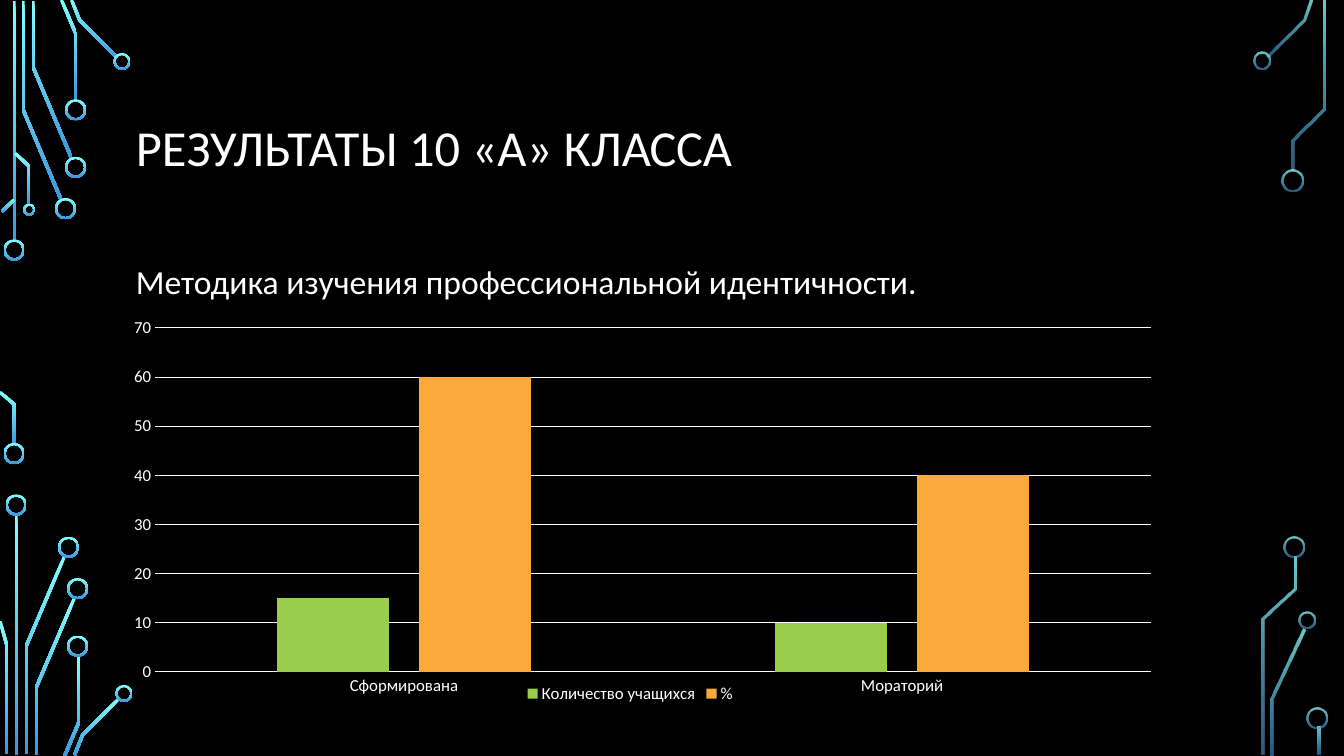
from math import hypot

from lxml import etree
from pptx import Presentation
from pptx.chart.data import CategoryChartData
from pptx.dml.color import RGBColor
from pptx.enum.chart import XL_CHART_TYPE, XL_LEGEND_POSITION, XL_TICK_MARK
from pptx.enum.shapes import MSO_SHAPE
from pptx.enum.text import MSO_ANCHOR
from pptx.oxml import parse_xml
from pptx.oxml.ns import nsdecls, qn
from pptx.util import Inches, Pt

# Content
TITLE = "РЕЗУЛЬТАТЫ 10 «А» КЛАССА"
SUBTITLE = "Методика изучения профессиональной идентичности."
LEVELS = ["Сформирована", "Мораторий"]
RESULTS = [  # name, values, colour
    ("Количество учащихся", (15, 10), "9ACD4C"),
    ("%", (60, 40), "FAA93A"),
]
FONT, WHITE, BLACK = "Calibri", "FFFFFF", "000000"
GLOW = ("82FFFF", "3D97DE")
PLOT_AREA = {"x": 0.046, "y": 0.406, "w": 0.952, "h": 0.538}

# Circuit decoration: centre lines of the traces; centre and diameter of the rings
TRACE_WIDTH, RING_WIDTH = 0.03, 0.02
LEFT_TRACES = [
    [(0.14, 0.01), (0.14, 2.4)],
    [(0.23, 0.01), (0.23, 1.09), (0.61, 1.99)],
    [(0.33, 0.01), (0.33, 0.67), (0.71, 1.57)],
    [(0.61, 0), (0.75, 0.33), (0.75, 1)],
    [(0.71, 0), (0.79, 0.2), (1.16, 0.57)],
    [(0.14, 1.98), (0.02, 2.1)],
    [(0, 3.89), (0.14, 4.01), (0.14, 4.41)],
    [(0.15, 1.52), (0.29, 1.65), (0.29, 2.03)],
    [(0.16, 5.1), (0.16, 7.49)],
    [(0.26, 7.48), (0.26, 6.41), (0.64, 5.52)],
    [(0, 6.16), (0.07, 6.41), (0.07, 7.48)],
    [(0.36, 7.49), (0.36, 6.82), (0.74, 5.93)],
    [(0.64, 7.5), (0.78, 7.17), (0.78, 6.5)],
    [(0.74, 7.49), (0.82, 7.29), (1.18, 6.93)],
]
LEFT_RINGS = [
    (0.14, 2.48, 0.21), (0.14, 4.5, 0.21), (0.65, 2.07, 0.21), (0.75, 1.66, 0.21),
    (0.75, 1.09, 0.21), (1.21, 0.61, 0.17), (0.29, 2.08, 0.12), (0.16, 5.01, 0.21),
    (0.68, 5.43, 0.21), (0.77, 5.84, 0.21), (0.77, 6.41, 0.21), (1.23, 6.88, 0.17),
]
RIGHT_TRACES = [
    [(13, 0), (12.93, 0.2), (12.57, 0.56)],
    [(12.62, 7.49), (12.62, 6.93), (12.93, 6.24)],
    [(13.13, 0.01), (13.13, 1.08), (12.82, 1.39), (12.82, 1.69)],
    [(12.84, 5.52), (12.84, 5.84), (12.53, 6.14), (12.53, 7.49)],
    [(13.08, 7.21), (13.08, 7.49)],
]
RIGHT_RINGS = [
    (12.52, 0.6, 0.17), (12.82, 1.79, 0.21), (12.96, 6.15, 0.17),
    (12.83, 5.43, 0.21), (13.06, 7.12, 0.21),
]
CIRCUITS = [  # traces, rings, opacity in percent at top and bottom
    (LEFT_TRACES, LEFT_RINGS, (100, 100)),
    (RIGHT_TRACES, RIGHT_RINGS, (80, 60)),
]


def rgb(value):
    return RGBColor.from_string(value)


def glow(shape, opacities):
    shape.shadow.inherit = False
    shape.line.fill.background()
    shape.fill.gradient()
    shape.fill.gradient_angle = 270
    for stop, color, opacity in zip(shape.fill.gradient_stops, GLOW, opacities):
        stop.color.rgb = rgb(color)
    for color, opacity in zip(shape._element.spPr.iter(qn("a:srgbClr")), opacities):
        if opacity < 100:
            etree.SubElement(color, qn("a:alpha")).set("val", str(opacity * 1000))


def trace_side(points, offset):
    """Shift a polyline sideways, with mitred corners."""
    normals = []
    for (x1, y1), (x2, y2) in zip(points, points[1:]):
        length = hypot(x2 - x1, y2 - y1)
        normals.append(((y1 - y2) / length, (x2 - x1) / length))
    side = []
    for (x, y), (ax, ay), (bx, by) in zip(points, normals[:1] + normals, normals + normals[-1:]):
        scale = offset / (1 + ax * bx + ay * by)
        side.append((Inches(x + (ax + bx) * scale), Inches(y + (ay + by) * scale)))
    return side


def add_trace(slide, points, opacities):
    half = TRACE_WIDTH / 2
    outline = trace_side(points, half) + trace_side(points, -half)[::-1]
    builder = slide.shapes.build_freeform(*outline[0])
    builder.add_line_segments(outline[1:], close=True)
    glow(builder.convert_to_shape(), opacities)


def add_ring(slide, x, y, size, opacities):
    ring = slide.shapes.add_shape(MSO_SHAPE.DONUT, Inches(x - size / 2), Inches(y - size / 2),
                                  Inches(size), Inches(size))
    ring.adjustments[0] = RING_WIDTH / size
    glow(ring, opacities)


def set_font(font, size):
    font.name, font.size, font.color.rgb = FONT, Pt(size), rgb(WHITE)


def add_text(slide, text, *, top, height, size, spacing, anchor):
    frame = slide.shapes.add_textbox(Inches(1.25), Inches(top), Inches(10.83), Inches(height)).text_frame
    frame.word_wrap = True
    frame.vertical_anchor = anchor
    paragraph = frame.paragraphs[0]
    paragraph.line_spacing = spacing
    run = paragraph.add_run()
    run.text = text
    set_font(run.font, size)


def style_line(line):
    line.color.rgb = rgb(WHITE)
    line.width = Pt(0.75)


def add_results_chart(slide):
    data = CategoryChartData()
    data.categories = LEVELS
    for name, values, _ in RESULTS:
        data.add_series(name, values)
    chart = slide.shapes.add_chart(XL_CHART_TYPE.COLUMN_CLUSTERED, Inches(1.06), Inches(0.68),
                                   Inches(10.38), Inches(6.34), data).chart
    chart.has_title = False
    set_font(chart.font, 10)
    plot = chart.plots[0]
    plot.gap_width, plot.overlap, plot.vary_by_categories = 219, -27, False
    for series, (_, _, color) in zip(plot.series, RESULTS):
        series.format.fill.solid()
        series.format.fill.fore_color.rgb = rgb(color)

    # Axes and legend
    for axis in (chart.category_axis, chart.value_axis):
        axis.major_tick_mark = axis.minor_tick_mark = XL_TICK_MARK.NONE
        set_font(axis.tick_labels.font, 12)
    style_line(chart.category_axis.format.line)
    scale = chart.value_axis
    scale.minimum_scale, scale.maximum_scale, scale.major_unit = 0, 70, 10
    scale.format.line.fill.background()
    scale.has_major_gridlines = True
    style_line(scale.major_gridlines.format.line)
    chart.has_legend = True
    chart.legend.position = XL_LEGEND_POSITION.BOTTOM
    chart.legend.include_in_layout = False
    set_font(chart.legend.font, 12)

    # Fixed place of the plot area
    area = chart._chartSpace.find(".//" + qn("c:plotArea"))
    for layout in area.findall(qn("c:layout")):
        area.remove(layout)
    parts = '<c:layoutTarget val="inner"/><c:xMode val="edge"/><c:yMode val="edge"/>'
    parts += "".join(f'<c:{key} val="{value}"/>' for key, value in PLOT_AREA.items())
    area.insert(0, parse_xml(f'<c:layout {nsdecls("c")}><c:manualLayout>{parts}</c:manualLayout></c:layout>'))


def main():
    deck = Presentation()
    deck.slide_width, deck.slide_height = Inches(13.33), Inches(7.5)
    slide = deck.slides.add_slide(deck.slide_layouts[6])
    slide.background.fill.solid()
    slide.background.fill.fore_color.rgb = rgb(BLACK)
    for traces, rings, opacities in CIRCUITS:
        for points in traces:
            add_trace(slide, points, opacities)
        for ring in rings:
            add_ring(slide, *ring, opacities)
    add_text(slide, TITLE, top=0.68, height=1.62, size=36, spacing=0.9, anchor=MSO_ANCHOR.MIDDLE)
    add_text(slide, SUBTITLE, top=2.46, height=3.87, size=24, spacing=1.2, anchor=MSO_ANCHOR.TOP)
    add_results_chart(slide)
    deck.save("out.pptx")


if __name__ == "__main__":
    main()
